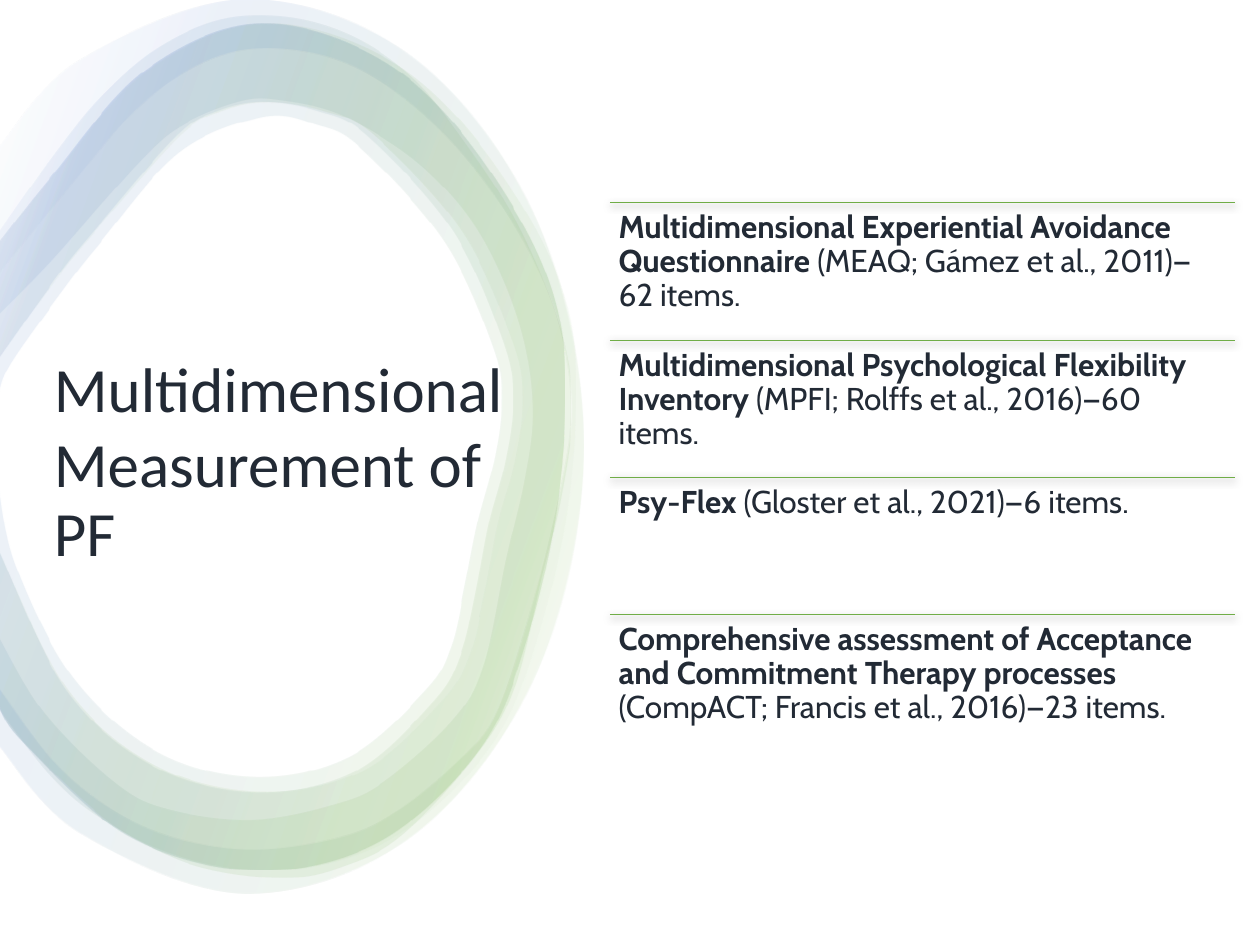
from dataclasses import dataclass

from lxml import etree
from pptx import Presentation
from pptx import util as u
from pptx.dml.color import RGBColor
from pptx.enum import shapes, text
from pptx.oxml import ns, parse_xml


@dataclass(frozen=True)
class Theme:
    white: str = "FFFFFF"
    ink: str = "222A35"
    green: str = "70AD47"
    blue: str = "4472C4"
    title_font: str = "Calibri"
    body_font: str = "Cabin"
    title_size: int = 36
    body_size: int = 18
    ring_alpha: int = 10
    ring_angle: int = 200


THEME = Theme()
DRAWING = ns.nsdecls("a")

WAVY_OUTER = [
    (-0.01, 1.85), (0.45, 1.2), (0.81, 0.76), (1.24, 0.39), (1.75, 0.16), (2.28, 0.14),
    (2.79, 0.29), (3.25, 0.6), (3.62, 1.04), (4.1, 1.78), (4.45, 2.64), (4.53, 3.3),
    (4.44, 3.97), (4.3, 4.54), (4.08, 5.44), (3.78, 5.98), (3.2, 6.61), (2.74, 6.86),
    (2.24, 6.96), (1.51, 6.85), (0.82, 6.5), (0.41, 6.16), (-0.01, 5.62),
]
WAVY_INNER = [
    (-0.01, 5.04), (0.36, 5.66), (0.93, 6.22), (1.35, 6.42), (2, 6.5), (2.64, 6.38),
    (3.04, 6.2), (3.58, 5.72), (3.83, 5.28), (4.01, 4.43), (4.15, 3.83), (4.22, 3.3),
    (4.16, 2.75), (3.99, 2.23), (3.74, 1.76), (3.4, 1.37), (3.03, 1.09), (2.64, 0.89),
    (2.24, 0.8), (1.93, 0.8), (1.47, 0.98), (1.12, 1.27), (0.42, 2.06), (-0.01, 2.5),
]
BAND_OUTER = [
    (-0.01, 1.93), (0.41, 1.4), (1.15, 0.56), (2.08, 0.19), (3.12, 0.54), (3.93, 1.43),
    (4.43, 2.53), (4.43, 3.87), (4.15, 5.15), (3.77, 5.98), (2.99, 6.68), (2.03, 6.9),
    (1.02, 6.63), (0.19, 5.89), (-0.01, 5.59),
]
THIN_INNER = [
    (-0.01, 4.35), (0.52, 5.46), (1.21, 6.07), (2.03, 6.28), (2.82, 6.11), (3.44, 5.55),
    (3.65, 5.18), (3.76, 4.73), (3.87, 4.15), (4, 3.66), (4.06, 3.2), (3.99, 2.73),
    (3.59, 1.84), (2.91, 1.08), (2.51, 0.88), (2.08, 0.81), (1.73, 0.88), (1.4, 1.08),
    (0.74, 1.84), (0.45, 2.2), (-0.01, 2.85),
]
THICK_INNER = [
    (-0.01, 3.84), (0.13, 4.49), (0.58, 5.37), (1.25, 5.96), (2.03, 6.16), (2.78, 5.99),
    (3.38, 5.46), (3.57, 5.13), (3.67, 4.7), (3.78, 4.15), (3.92, 3.62), (3.97, 3.2),
    (3.91, 2.77), (3.52, 1.92), (2.86, 1.18), (2.5, 0.99), (2.08, 0.93), (1.42, 1.21),
    (0.8, 1.92), (0.51, 2.29), (0.09, 2.88), (-0.01, 3.14),
]
OVAL_OUTER = [
    (-0.01, 1.18), (0.64, 0.48), (1.97, 0), (3.3, 0.48), (4.27, 1.78), (4.63, 3.54),
    (4.27, 5.31), (3.3, 6.61), (1.97, 7.09), (0.64, 6.61), (-0.01, 5.91),
]
OVAL_INNER = [
    (-0.01, 5.45), (0.43, 6.04), (0.89, 6.42), (1.4, 6.65), (2.04, 6.74), (2.74, 6.63),
    (3.17, 6.42), (3.62, 6.05), (3.93, 5.67), (4.22, 4.8), (4.45, 3.86), (4.53, 3.23),
    (4.44, 2.6), (4.21, 2.03), (3.91, 1.54), (3.56, 1.11), (3.17, 0.76), (2.75, 0.51),
    (2.3, 0.4), (1.85, 0.42), (1.42, 0.61), (1.03, 0.93), (0.67, 1.35), (-0.01, 2.18),
]

GREEN_TO_BLUE = [(2, THEME.white), (16, THEME.green), (85, THEME.blue), (100, THEME.white)]
RINGS = [
    (WAVY_OUTER, WAVY_INNER, 1,
     [(37, THEME.green), (85, THEME.blue), (100, THEME.white)]),
    (BAND_OUTER, THIN_INNER, 1.02,
     [(2, THEME.white), (54, THEME.green), (100, THEME.white)]),
    (BAND_OUTER, THICK_INNER, 1, GREEN_TO_BLUE),
    (BAND_OUTER, THIN_INNER, 1, GREEN_TO_BLUE),
    (OVAL_OUTER, OVAL_INNER, 1,
     [(2, THEME.white), (16, THEME.green), (74, THEME.blue), (100, THEME.white)]),
]
MEASURES = [
    ("Multidimensional Experiential Avoidance Questionnaire ",
     "(MEAQ; Gámez et al., 2011)—62 items."),
    ("Multidimensional Psychological Flexibility Inventory ",
     "(MPFI; Rolffs et al., 2016)—60 items."),
    ("Psy-Flex ", "(Gloster et al., 2021)—6 items."),
    ("Comprehensive assessment of Acceptance and Commitment Therapy processes ",
     "(CompACT; Francis et al., 2016)—23 items."),
]


def smooth_edge(corners, segments):
    padded = [corners[0], *corners, corners[-1]]
    for segment, before, start, end, after in zip(
            segments, padded, padded[1:], padded[2:], padded[3:]):
        leave = [s + (e - b) / 6 for b, s, e in zip(before, start, end)]
        arrive = [e - (a - s) / 6 for s, e, a in zip(start, end, after)]
        points = "".join(f'<a:pt x="{round(x)}" y="{round(y)}"/>'
                         for x, y in (leave, arrive, end))
        curve = parse_xml(f"<a:cubicBezTo {DRAWING}>{points}</a:cubicBezTo>")
        segment.getparent().replace(segment, curve)


def fill_gradient(ring, stops):
    stop_xml = "".join(
        f'<a:gs pos="{position * 1000}"><a:srgbClr val="{color}">'
        f'<a:alpha val="{THEME.ring_alpha * 1000}"/></a:srgbClr></a:gs>'
        for position, color in stops)
    gradient = parse_xml(
        f'<a:gradFill {DRAWING} rotWithShape="1"><a:gsLst>{stop_xml}</a:gsLst>'
        f'<a:lin ang="{THEME.ring_angle * 60000}" scaled="0"/></a:gradFill>')
    ring.fill.background()
    properties = ring.element.spPr
    properties.replace(properties.find(ns.qn("a:noFill")), gradient)


def add_ring(group, outer, inner, stretch, stops):
    outline = [(u.Inches(x * stretch), u.Inches(y)) for x, y in outer + inner]
    builder = group.shapes.build_freeform(*outline[0])
    builder.add_line_segments(outline[1:], close=True)
    ring = builder.convert_to_shape()
    geometry = ring.element.spPr
    corners = [(int(point.get("x")), int(point.get("y")))
               for point in geometry.iter(ns.qn("a:pt"))]
    segments = list(geometry.iter(ns.qn("a:lnTo")))
    turn = len(outer)
    smooth_edge(corners[:turn], segments[:turn - 1])
    smooth_edge(corners[turn:turn + len(inner)], segments[turn:])
    ring.shadow.inherit = False
    ring.line.fill.background()
    fill_gradient(ring, stops)


def add_rule(group, left, top, width):
    rule = group.shapes.add_connector(
        shapes.MSO_CONNECTOR.STRAIGHT, u.Inches(left), u.Inches(top),
        u.Inches(left + width), u.Inches(top))
    rule.line.color.rgb = RGBColor.from_string(THEME.green)
    rule.line.width = u.Pt(0.5)
    effects = etree.SubElement(rule.element.spPr, ns.qn("a:effectLst"))
    effects.append(parse_xml(
        f'<a:outerShdw {DRAWING} blurRad="57150" dist="19050" dir="5400000" '
        'algn="ctr" rotWithShape="0"><a:srgbClr val="000000">'
        '<a:alpha val="63000"/></a:srgbClr></a:outerShdw>'))


def add_frame(parent, left, top, width, height, inset=0.07):
    frame = parent.add_textbox(*map(u.Inches, (left, top, width, height))).text_frame
    frame.word_wrap = True
    frame.margin_left = frame.margin_right = u.Inches(inset)
    frame.margin_top = frame.margin_bottom = u.Inches(inset)
    return frame


def add_text(paragraph, content, *, font, size, bold=False):
    paragraph.line_spacing = 0.9
    run = paragraph.add_run()
    run.text = content
    run.font.name = font
    run.font.size = u.Pt(size)
    run.font.bold = bold
    run.font.color.rgb = RGBColor.from_string(THEME.ink)


def add_title(slide):
    title = add_frame(slide.shapes, 0.33, 2.47, 3.86, 3.02, inset=0.1)
    title.vertical_anchor = text.MSO_ANCHOR.MIDDLE
    title.margin_top, title.margin_bottom = u.Inches(0.05), u.Inches(0.65)
    first, second = title.paragraphs[0], title.add_paragraph()
    first.space_after = u.Pt(4.5)
    for line, content in ((first, "Multidimensional"), (second, "Measurement of PF")):
        add_text(line, content, font=THEME.title_font, size=THEME.title_size)


def add_measures(slide, left=4.84, top=1.61, width=4.96, pitch=1.09):
    group = slide.shapes.add_group_shape()
    for row, (name, citation) in enumerate(MEASURES):
        row_top = top + row * pitch
        add_rule(group, left, row_top, width)
        entry = add_frame(group.shapes, left, row_top, width, pitch).paragraphs[0]
        add_text(entry, name, font=THEME.body_font, size=THEME.body_size, bold=True)
        add_text(entry, citation, font=THEME.body_font, size=THEME.body_size)


def add_backdrop(slide, width, height):
    backdrop = slide.shapes.add_shape(shapes.MSO_SHAPE.RECTANGLE, 0, 0, width, height)
    backdrop.shadow.inherit = False
    backdrop.fill.solid()
    backdrop.fill.fore_color.rgb = RGBColor.from_string(THEME.white)
    backdrop.line.fill.background()


def main():
    deck = Presentation()
    deck.slide_width, deck.slide_height = u.Inches(10), u.Inches(7.5)
    slide = deck.slides.add_slide(deck.slide_layouts[6])
    add_backdrop(slide, deck.slide_width, deck.slide_height)
    rings = slide.shapes.add_group_shape()
    for ring in RINGS:
        add_ring(rings, *ring)
    add_title(slide)
    add_measures(slide)
    deck.save("out.pptx")


if __name__ == "__main__":
    main()
